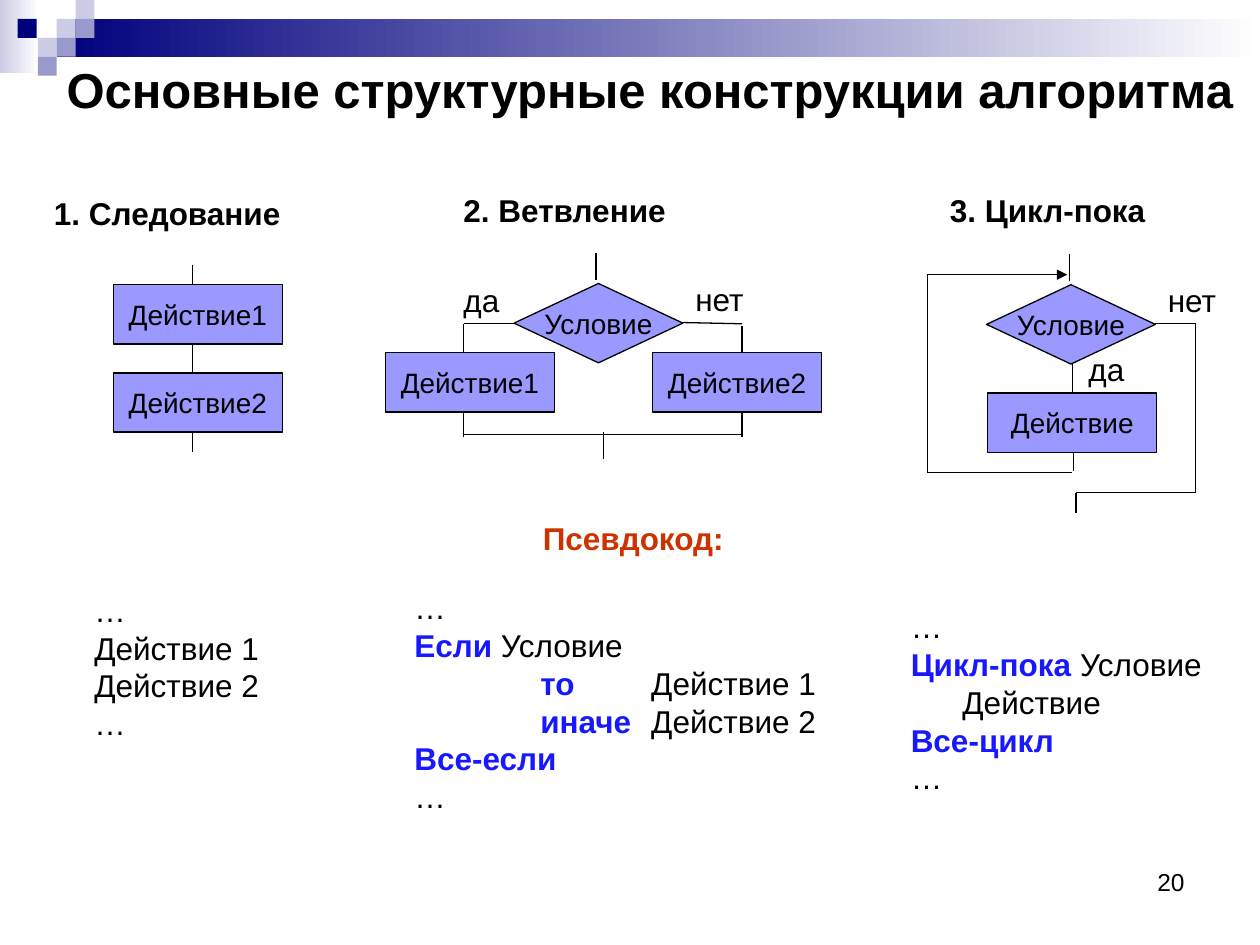
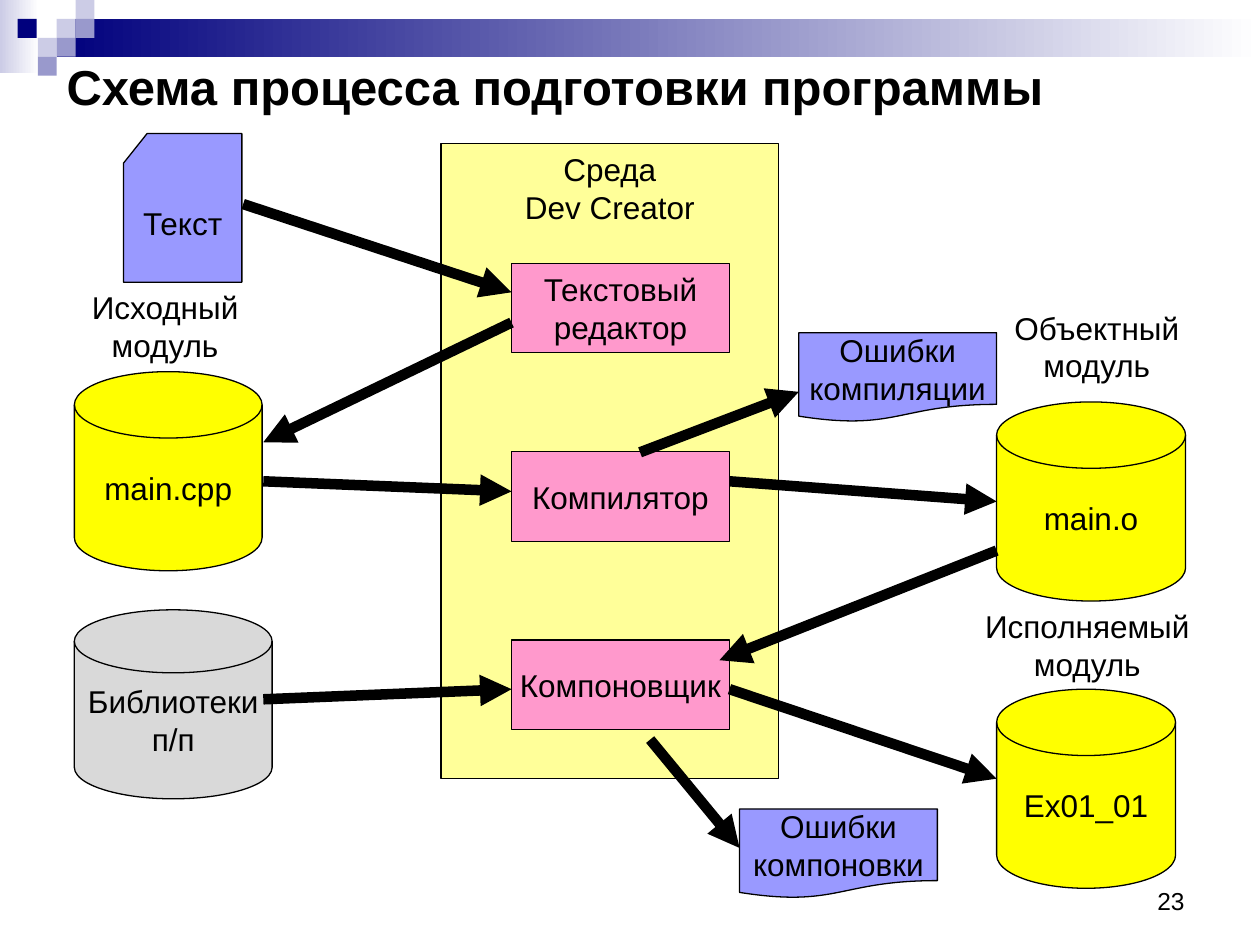
import itertools

import pptx
import pptx.dml.color
import pptx.enum.shapes
import pptx.enum.text
import pptx.oxml
import pptx.oxml.ns
import pptx.util

Inches = pptx.util.Inches
Pt = pptx.util.Pt
RGBColor = pptx.dml.color.RGBColor
SHAPE = pptx.enum.shapes.MSO_SHAPE
ALIGN = pptx.enum.text.PP_ALIGN
ANCHOR = pptx.enum.text.MSO_ANCHOR

FONT = "Arial"
BLACK = RGBColor(0x00, 0x00, 0x00)
WHITE = RGBColor(0xFF, 0xFF, 0xFF)
NAVY = RGBColor(0x00, 0x00, 0x7D)
LAVENDER = RGBColor(0xCC, 0xCC, 0xE6)
DUSK = RGBColor(0x99, 0x99, 0xCC)
VIOLET = RGBColor(0x99, 0x99, 0xFF)
PINK = RGBColor(0xFF, 0x99, 0xCC)
CREAM = RGBColor(0xFF, 0xFF, 0x99)
YELLOW = RGBColor(0xFF, 0xFF, 0x00)
GREY = RGBColor(0xD9, 0xD9, 0xD9)
KEYWORD = RGBColor(0x18, 0x18, 0xFF)
RUST = RGBColor(0xCC, 0x33, 0x00)

BANDS = [((0, 0, 0.31, 0.58), LAVENDER), ((0.45, 0.15, 9.55, 0.3), NAVY)]
SQUARE = 0.15
SQUARES = [
    (0.45, 0.15, LAVENDER), (0.6, 0, LAVENDER), (0.6, 0.15, DUSK),
    (0.3, 0.3, LAVENDER), (0.14, 0.15, NAVY), (0.45, 0.3, DUSK),
    (0.3, 0.45, DUSK),
]

HEADINGS = [
    ("1. Следование", (0.33, 1.49, 2.01, 0.4), BLACK),
    ("2. Ветвление", (3.58, 1.47, 1.82, 0.4), BLACK),
    ("3. Цикл-пока", (7.44, 1.47, 1.75, 0.4), BLACK),
    ("Псевдокод:", (4.21, 4.07, 1.64, 0.4), RUST),
]
BLOCK_WIDTH = 1.34
ACTION_HEIGHT = 0.47
CONDITION_HEIGHT = 0.63
ACTIONS = [
    ("Действие1", 0.9, 2.26), ("Действие2", 0.9, 2.96),
    ("Действие1", 3.06, 2.8), ("Действие2", 5.18, 2.8),
    ("Действие", 7.84, 3.12),
]
CONDITIONS = [("Условие", 4.08, 2.25), ("Условие", 7.83, 2.26)]
BRANCH_LABELS = [
    ("да", (3.58, 2.18, 0.49, 0.4)), ("нет", (5.42, 2.17, 0.59, 0.4)),
    ("да", (8.54, 2.73, 0.49, 0.4)), ("нет", (9.17, 2.18, 0.59, 0.4)),
]
FLOW_PATHS = [
    [(1.53, 2.1), (1.53, 2.25)],
    [(1.53, 2.73), (1.53, 2.96)],
    [(1.53, 3.44), (1.53, 3.59)],
    [(4.73, 2.01), (4.73, 2.22)],
    [(4.08, 2.57), (3.68, 2.57), (3.68, 2.79)],
    [(5.42, 2.56), (5.89, 2.57)],
    [(5.89, 2.59), (5.89, 2.8)],
    [(3.68, 3.27), (3.68, 3.47)],
    [(5.89, 3.27), (5.89, 3.47)],
    [(3.68, 3.45), (5.89, 3.45)],
    [(4.79, 3.43), (4.79, 3.64)],
    [(8.49, 2.02), (8.49, 2.23)],
    [(8.51, 2.88), (8.51, 3.11)],
    [(8.52, 3.59), (8.52, 3.74)],
    [(8.51, 3.75), (7.36, 3.75), (7.36, 2.18)],
    [(9.17, 2.57), (9.49, 2.57), (9.49, 3.91), (8.54, 3.91), (8.54, 4.07)],
]
LOOP_BACK = [(7.36, 2.18), (8.47, 2.18)]

KEYWORDS = {"Если", "то", "иначе", "Все-если", "Цикл-пока", "Все-цикл"}
PSEUDOCODE = [
    ((0.65, 4.64, 1.51, 1.3), [], [["…"], ["Действие 1"], ["Действие 2"], ["…"]]),
    ((3.19, 4.62, 3.41, 1.9), [1, 1.88], [
        ["…"], ["Если", " Условие"], ["\t", "то", "\tДействие 1"],
        ["\t", "иначе", "\tДействие 2"], ["Все-если"], ["…"]]),
    ((7.13, 4.77, 2.52, 1.6), [0.41], [
        ["…"], ["Цикл-пока", " Условие"], ["\tДействие"], ["Все-цикл"], ["…"]]),
]

ENVIRONMENT = (["Среда", "Dev Creator"], (3.5, 1.14, 2.68, 5.04))
TOOLS = [["Текстовый", "редактор"], ["Компилятор"], ["Компоновщик"]]
TOOL_LEFT, TOOL_TOP, TOOL_STEP = 4.06, 2.09, 1.495
TOOL_SIZE = (1.73, 0.71)
FILES = [
    (SHAPE.FLOWCHART_CARD, ["Текст"], (0.98, 1.06, 0.94, 1.18), VIOLET),
    (SHAPE.FLOWCHART_MAGNETIC_DISK, ["main.cpp"], (0.59, 2.95, 1.49, 1.58), YELLOW),
    (SHAPE.FLOWCHART_MAGNETIC_DISK, ["main.o"], (7.91, 3.19, 1.5, 1.58), YELLOW),
    (SHAPE.FLOWCHART_MAGNETIC_DISK, ["Библиотеки", "п/п"], (0.59, 4.84, 1.57, 1.5), GREY),
    (SHAPE.FLOWCHART_MAGNETIC_DISK, ["Ex01_01"], (7.91, 5.47, 1.42, 1.58), YELLOW),
    (SHAPE.FLOWCHART_DOCUMENT, ["Ошибки", "компиляции"], (6.34, 2.64, 1.57, 0.71), VIOLET),
    (SHAPE.FLOWCHART_DOCUMENT, ["Ошибки", "компоновки"], (5.87, 6.42, 1.57, 0.71), VIOLET),
]
MODULE_LABELS = [
    (["Объектный", "модуль"], (7.91, 2.4, 1.59, 0.7)),
    (["Исполняемый", "модуль"], (7.68, 4.77, 1.9, 0.7)),
    (["Исходный", "модуль"], (0.62, 2.24, 1.38, 0.7)),
]
PROCESS_ARROWS = [
    ((1.93, 1.62), (4.06, 2.32)), ((4.06, 2.56), (2.09, 3.51)),
    ((2.09, 3.82), (4.06, 3.9)), ((5.79, 3.82), (7.91, 3.98)),
    ((5.08, 3.59), (6.34, 3.11)), ((5.16, 5.87), (5.87, 6.73)),
    ((5.79, 5.47), (7.91, 6.18)), ((2.09, 5.55), (4.06, 5.47)),
    ((7.91, 4.37), (5.71, 5.24)),
]


def lengths(place):
    return [Inches(value) for value in place]


def add_child(parent, tag, **attributes):
    child = pptx.oxml.parse_xml(f"<a:{tag} {pptx.oxml.ns.nsdecls('a')}/>")
    for name, value in attributes.items():
        child.set(name, str(value))
    parent.append(child)
    return child


def write(frame, lines, size=18, bold=False, color=BLACK, align=ALIGN.LEFT,
          anchor=ANCHOR.TOP, wrap=False, tabs=()):
    frame.word_wrap = wrap
    frame.vertical_anchor = anchor
    for number, line in enumerate(lines):
        para = frame.paragraphs[0] if number == 0 else frame.add_paragraph()
        if tabs:
            stops = add_child(para._p.get_or_add_pPr(), "tabLst")
            for tab in tabs:
                add_child(stops, "tab", pos=int(Inches(tab)), algn="l")
        para.alignment = align
        para.font.name = FONT
        para.font.size = Pt(size)
        para.font.bold = bold
        para.font.color.rgb = color
        for piece in [line] if isinstance(line, str) else line:
            span = para.add_run()
            span.text = piece
            if piece in KEYWORDS:
                span.font.bold = True
                span.font.color.rgb = KEYWORD


def add_text(page, lines, place, **style):
    box = page.shapes.add_textbox(*lengths(place))
    write(box.text_frame, lines, **style)


def add_plain(page, kind, place, fill):
    shape = page.shapes.add_shape(kind, *lengths(place))
    shape.shadow.inherit = False
    shape.line.fill.background()
    shape.fill.solid()
    shape.fill.fore_color.rgb = fill
    return shape


def add_block(page, kind, lines, place, fill, size=18, anchor=ANCHOR.MIDDLE):
    block = add_plain(page, kind, place, fill)
    block.line.color.rgb = BLACK
    block.line.width = Pt(0.75)
    write(block.text_frame, lines, size=size, align=ALIGN.CENTER, anchor=anchor)


def add_line(page, start, end, width=0.75, arrow=False):
    line = page.shapes.add_connector(
        pptx.enum.shapes.MSO_CONNECTOR.STRAIGHT, *lengths(start + end))
    line.line.color.rgb = BLACK
    line.line.width = Pt(width)
    if arrow:
        add_child(line.line._get_or_add_ln(), "tailEnd", type="triangle")
    add_child(line._element.spPr, "effectLst")


def add_page(deck, title, title_place, number, number_top):
    page = deck.slides.add_slide(deck.slide_layouts[6])
    for place, color in BANDS:
        band = add_plain(page, SHAPE.RECTANGLE, place, color)
        band.fill.gradient()
        band.fill.gradient_angle = 0
        for stop, position, shade in zip(band.fill.gradient_stops, (0, 1), (color, WHITE)):
            stop.position = position
            stop.color.rgb = shade
    for left, top, color in SQUARES:
        add_plain(page, SHAPE.RECTANGLE, (left, top, SQUARE, SQUARE), color)
    add_text(page, [number], (7.17, number_top, 2.33, 0.52), size=14,
             align=ALIGN.RIGHT, wrap=True)
    add_text(page, [title], title_place, size=28, bold=True,
             anchor=ANCHOR.MIDDLE, wrap=True)
    return page


def build_structures(deck):
    page = add_page(deck, "Основные структурные конструкции алгоритма",
                    (0.43, 0.5, 9.57, 0.41), "20", 6.83)
    for text, place, color in HEADINGS:
        add_text(page, [text], place, bold=True, color=color)
    for kind, height, blocks in (
            (SHAPE.RECTANGLE, ACTION_HEIGHT, ACTIONS),
            (SHAPE.DIAMOND, CONDITION_HEIGHT, CONDITIONS)):
        for text, left, top in blocks:
            add_block(page, kind, [text], (left, top, BLOCK_WIDTH, height), VIOLET, size=16)
    for points in FLOW_PATHS:
        for start, end in itertools.pairwise(points):
            add_line(page, start, end)
    add_line(page, *LOOP_BACK, arrow=True)
    for text, place in BRANCH_LABELS:
        add_text(page, [text], place)
    for place, tabs, lines in PSEUDOCODE:
        add_text(page, lines, place, tabs=tabs)


def build_process(deck):
    page = add_page(deck, "Схема процесса подготовки программы",
                    (0.43, 0.36, 9, 0.64), "23", 6.98)
    add_block(page, SHAPE.RECTANGLE, *ENVIRONMENT, CREAM, anchor=ANCHOR.TOP)
    for row, lines in enumerate(TOOLS):
        place = (TOOL_LEFT, TOOL_TOP + row * TOOL_STEP) + TOOL_SIZE
        add_block(page, SHAPE.FLOWCHART_PROCESS, lines, place, PINK)
    for kind, lines, place, fill in FILES:
        add_block(page, kind, lines, place, fill)
    for start, end in PROCESS_ARROWS:
        add_line(page, start, end, width=6, arrow=True)
    for lines, place in MODULE_LABELS:
        add_text(page, lines, place, align=ALIGN.CENTER)


def main():
    deck = pptx.Presentation()
    deck.slide_width, deck.slide_height = Inches(10), Inches(7.5)
    build_structures(deck)
    build_process(deck)
    deck.save("out.pptx")


if __name__ == "__main__":
    main()
